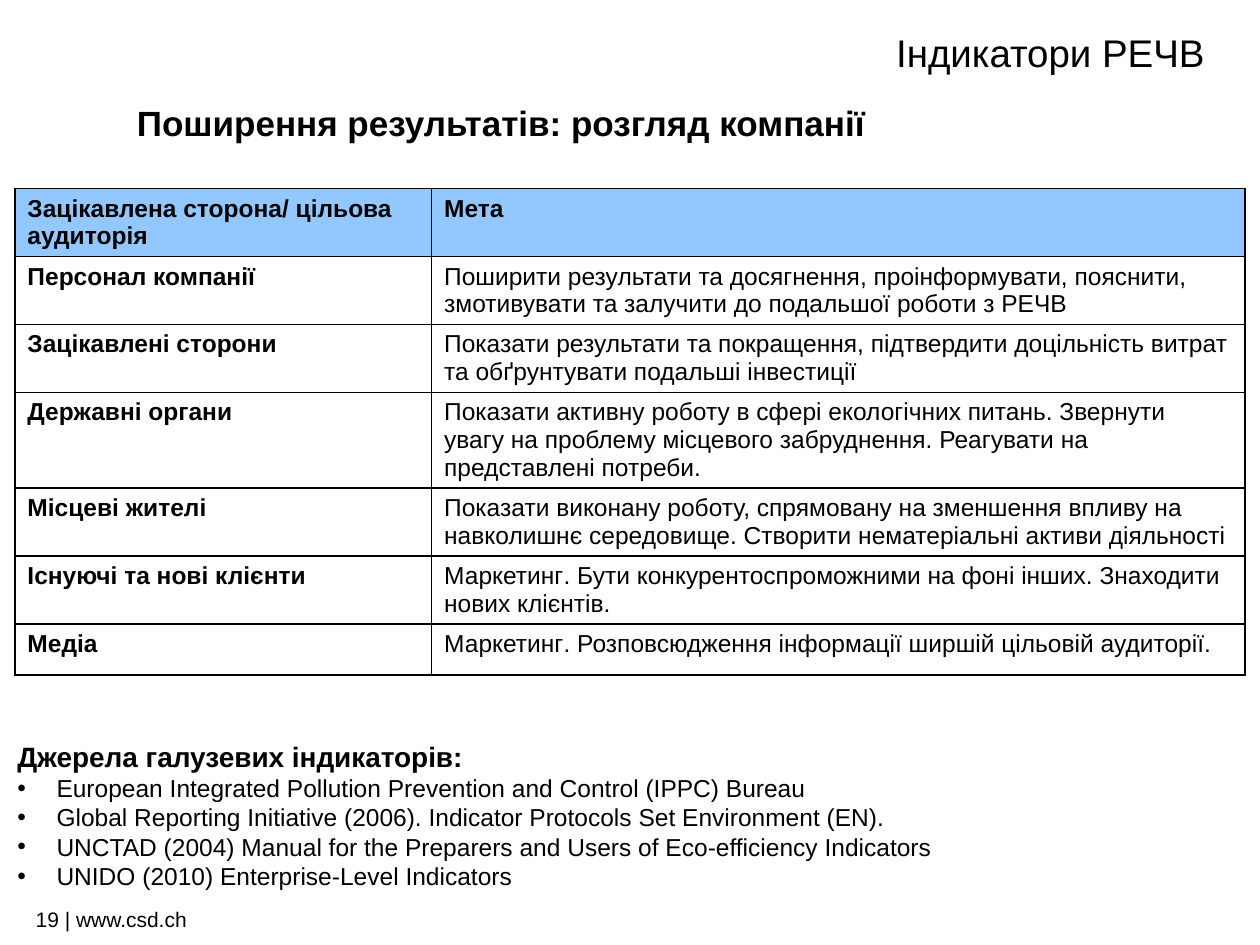
from lxml import etree
from pptx import Presentation
from pptx.dml.color import RGBColor
from pptx.enum import lang, text
from pptx.oxml import ns
from pptx.util import Cm, Pt

COLORS = {"ink": "000000", "header": "92C8FF"}
FONT = "Arial"
LANGUAGES = (lang.MSO_LANGUAGE_ID.UKRAINIAN, lang.MSO_LANGUAGE_ID.RUSSIAN)

HEADER = ("Зацікавлена сторона/ цільова аудиторія", "Мета")
# Audience, purpose ("|" starts a new run), row height in cm
AUDIENCES = [
    ("Персонал компанії",
     "Поширити результати та досягнення, проінформувати, пояснити, "
     "змотивувати та залучити до подальшої роботи з РЕЧВ", 1.37),
    ("Зацікавлені сторони",
     "Показати результати та покращення, підтвердити доцільність витрат "
     "та обґрунтувати подальші інвестиції", 1.37),
    ("Державні органи",
     "Показати активну роботу в сфері екологічних питань. Звернути увагу на "
     "проблему місцевого забруднення. Реагувати на представлені потреби.", 1.92),
    ("Місцеві жителі",
     "Показати виконану роботу, спрямовану на зменшення впливу на навколишнє "
     "середовище. Створити нематеріальні активи діяльності", 1.37),
    ("Існуючі та нові клієнти",
     "Маркетинг|. Бути конкурентоспроможними на фоні інших. "
     "Знаходити нових клієнтів.", 1.37),
    ("Медіа",
     "Маркетинг|. Розповсюдження інформації ширшій цільовій аудиторії.", 1.03),
]
SOURCES = [
    "European Integrated Pollution Prevention and Control (IPPC) Bureau",
    "Global Reporting Initiative (2006). Indicator Protocols Set Environment (EN).",
    "UNCTAD (2004) Manual for the Preparers and Users of Eco-efficiency Indicators",
    "UNIDO (2010) Enterprise-Level Indicators",
]


class SlideBuilder:
    def __init__(self, page):
        self.page = page

    def style(self, para, size, bold=False):
        para.font.name = FONT
        para.font.size = Pt(size)
        para.font.bold = bold
        para.font.color.rgb = RGBColor.from_string(COLORS["ink"])

    def title(self, words, left, top, width, height):
        box = self.page.shapes.title
        box.left, box.top, box.width, box.height = map(Cm, (left, top, width, height))
        frame = box.text_frame
        frame.text = words
        frame.vertical_anchor = text.MSO_ANCHOR.TOP
        frame.auto_size = text.MSO_AUTO_SIZE.NONE
        frame.paragraphs[0].alignment = text.PP_ALIGN.RIGHT
        self.style(frame.paragraphs[0], 22)

    def text_box(self, words, left, top, width, height, size, bold=False):
        box = self.page.shapes.add_textbox(*map(Cm, (left, top, width, height)))
        frame = box.text_frame
        frame.word_wrap = True
        frame.text = words
        self.style(frame.paragraphs[0], size, bold)
        return frame

    def bullet(self, frame, words, size):
        para = frame.add_paragraph()
        para.text = words
        properties = para._p.get_or_add_pPr()
        properties.set("marL", str(Cm(0.79)))
        properties.set("indent", str(-Cm(0.79)))
        etree.SubElement(properties, ns.qn("a:buFont"), typeface=FONT)
        etree.SubElement(properties, ns.qn("a:buChar"), char="•")
        self.style(para, size)

    def borders(self, cell):
        properties = cell._tc.get_or_add_tcPr()
        for side in ("lnL", "lnR", "lnT", "lnB"):
            line = etree.SubElement(properties, ns.qn(f"a:{side}"), w=str(Pt(1)))
            fill = etree.SubElement(line, ns.qn("a:solidFill"))
            etree.SubElement(fill, ns.qn("a:srgbClr"), val=COLORS["ink"])

    def cell(self, cell, words, size, bold, fill=None):
        para = cell.text_frame.paragraphs[0]
        for piece, language in zip(words.split("|"), LANGUAGES):
            span = para.add_run()
            span.text = piece
            span.font.language_id = language
        self.style(para, size, bold)
        cell.margin_bottom = Cm(0.02)
        self.borders(cell)
        if fill:
            cell.fill.solid()
            cell.fill.fore_color.rgb = RGBColor.from_string(COLORS[fill])
        else:
            cell.fill.background()

    def table(self, rows, heights, widths, left, top, size):
        frame = self.page.shapes.add_table(
            len(rows), len(widths), Cm(left), Cm(top),
            Cm(sum(widths)), Cm(sum(heights)))
        grid = frame.table
        grid.first_row = grid.horz_banding = False
        for column, width in zip(grid.columns, widths):
            column.width = Cm(width)
        for r, (row, height) in enumerate(zip(rows, heights)):
            grid.rows[r].height = Cm(height)
            for c, words in enumerate(row):
                self.cell(grid.cell(r, c), words, size, r == 0 or c == 0,
                          "header" if r == 0 else None)


def main():
    deck = Presentation()
    deck.slide_width, deck.slide_height = Cm(25.4), Cm(19.05)
    builder = SlideBuilder(deck.slides.add_slide(deck.slide_layouts[5]))

    # Headings
    builder.title("Індикатори РЕЧВ", 2.87, 0.46, 21.67, 1.37)
    builder.text_box("Поширення результатів: розгляд компанії",
                     2.51, 1.93, 21.59, 1.1, 20, bold=True)

    # Audiences and purposes
    rows = [HEADER] + [(audience, purpose) for audience, purpose, _ in AUDIENCES]
    heights = [1.37] + [height for _, _, height in AUDIENCES]
    builder.table(rows, heights, (8.4, 16.4), 0.3, 3.8, 14)

    # Sources
    sources = builder.text_box("Джерела галузевих індикаторів:",
                               0.1, 14.78, 22.2, 3.33, 16, bold=True)
    for source in SOURCES:
        builder.bullet(sources, source, 14)

    # Footer
    builder.text_box("19 | www.csd.ch", 0.47, 18.16, 17.42, 0.71, 12)

    deck.save("out.pptx")


if __name__ == "__main__":
    main()
